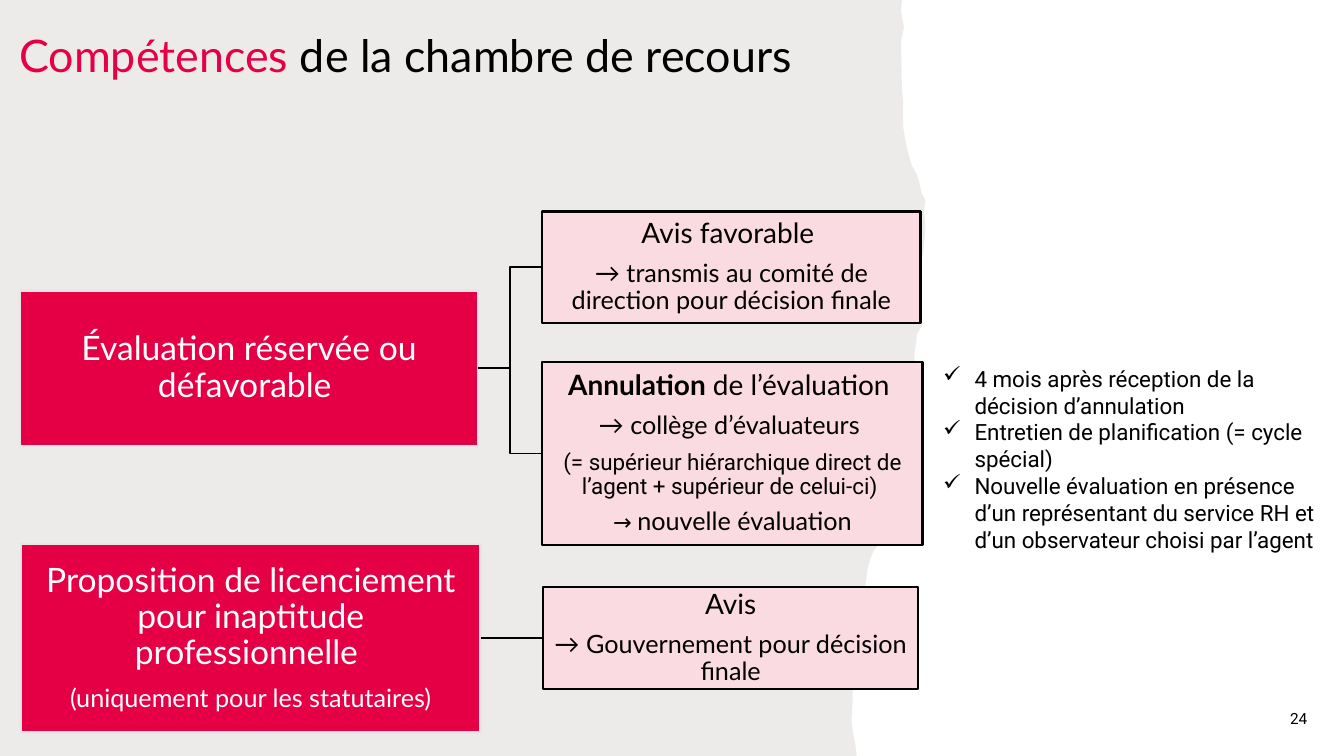
from dataclasses import dataclass

from lxml.etree import SubElement
from pptx import Presentation
from pptx.dml.color import RGBColor
from pptx.enum.shapes import MSO_CONNECTOR, MSO_SHAPE
from pptx.enum.text import MSO_ANCHOR, MSO_AUTO_SIZE, PP_ALIGN
from pptx.oxml.ns import qn
from pptx.util import Cm, Pt


@dataclass(frozen=True)
class Theme:
    red: str = "E50046"
    pink: str = "FBDBE2"
    sand: str = "ECEBE9"
    edge: str = "E7E6E6"
    black: str = "000000"
    white: str = "FFFFFF"
    head: str = "Lato"
    body: str = "Roboto"
    title: int = 32
    big: int = 24
    mid: int = 20
    sub: int = 18
    note: int = 16
    tiny: int = 11


# Right edge of the torn paper, in tenths of a millimetre
TORN = [
    (2273, 0), (2271, 30), (2278, 69), (2271, 104), (2271, 124), (2273, 226),
    (2276, 254), (2276, 318), (2281, 351), (2289, 386), (2294, 404),
    (2299, 419), (2309, 437), (2316, 455), (2322, 485), (2332, 505),
    (2329, 533), (2332, 572), (2329, 620), (2316, 698), (2319, 762),
    (2322, 795), (2324, 820), (2311, 841), (2309, 861), (2304, 894),
    (2306, 919), (2299, 942), (2294, 975), (2289, 1024), (2283, 1049),
    (2281, 1105), (2263, 1173), (2263, 1212), (2256, 1270), (2245, 1295),
    (2228, 1334), (2223, 1346), (2215, 1367), (2200, 1392), (2192, 1412),
    (2187, 1430), (2182, 1468), (2177, 1499), (2172, 1519), (2169, 1537),
    (2159, 1580), (2159, 1598), (2156, 1636), (2159, 1664), (2149, 1689),
    (2149, 1763), (2146, 1814), (2149, 1842), (2156, 1880), (2159, 1905),
]


def color(code):
    return RGBColor.from_string(code)


def write(frame, paras, font, size, ink, align=PP_ALIGN.LEFT,
          anchor=MSO_ANCHOR.TOP, inset=None, line=None, gap=0, bullet=None):
    """Fill a frame; each paragraph is a list of (text, format changes)."""
    frame.word_wrap = True
    frame.auto_size = MSO_AUTO_SIZE.NONE
    frame.vertical_anchor = anchor
    if inset is not None:
        frame.margin_left = frame.margin_right = inset
        frame.margin_top = frame.margin_bottom = inset
    for i, runs in enumerate(paras):
        para = frame.add_paragraph() if i else frame.paragraphs[0]
        para.alignment = align
        if line:
            para.line_spacing = line
        largest = max(look.get("size", size) for _, look in runs)
        para.space_after = Pt(round(gap * largest, 1))
        if bullet:
            props = para._p.get_or_add_pPr()
            props.set("marL", str(Cm(0.79)))
            props.set("indent", str(-Cm(0.79)))
            SubElement(props, qn("a:buChar")).set("char", bullet)
        for words, look in runs:
            run = para.add_run()
            run.text = words
            run.font.name = look.get("font", font)
            run.font.size = Pt(look.get("size", size))
            run.font.bold = look.get("bold", False)
            run.font.color.rgb = color(look.get("ink", ink))


class Deck:
    def __init__(self, theme):
        self.theme = theme
        self.file = Presentation()
        self.file.slide_width, self.file.slide_height = Cm(33.87), Cm(19.05)
        self.slide = self.file.slides.add_slide(self.file.slide_layouts[5])
        self.shapes = self.slide.shapes

    def title(self, spot, runs):
        head = self.shapes.title
        head.left, head.top, head.width, head.height = map(Cm, spot)
        write(head.text_frame, [runs], self.theme.head, self.theme.title,
              self.theme.black)

    def paper(self, edge):
        """Draw the torn sheet behind everything else."""
        form = self.shapes.build_freeform(0, 0, scale=Cm(0.01))
        form.add_line_segments(edge + [(0, edge[-1][1])], close=True)
        sheet = form.convert_to_shape()
        sheet.shadow.inherit = False
        sheet.fill.solid()
        sheet.fill.fore_color.rgb = color(self.theme.sand)
        sheet.line.fill.background()
        self.shapes.title.element.addprevious(sheet.element)

    def box(self, spot, paras, fill, line, ink, size, inset):
        rect = self.shapes.add_shape(MSO_SHAPE.RECTANGLE, *map(Cm, spot))
        rect.shadow.inherit = False
        rect.fill.solid()
        rect.fill.fore_color.rgb = color(fill)
        rect.line.color.rgb = color(line)
        rect.line.width = Pt(1.5)
        write(rect.text_frame, paras, self.theme.head, size, ink,
              align=PP_ALIGN.CENTER, anchor=MSO_ANCHOR.MIDDLE,
              inset=Cm(inset), line=0.9, gap=0.42)
        return rect

    def cause(self, spot, paras):
        look = self.theme
        return self.box(spot, paras, look.red, look.edge, look.white,
                        look.big, 0.05)

    def result(self, spot, paras):
        look = self.theme
        return self.box(spot, paras, look.pink, look.black, look.black,
                        look.mid, 0.03)

    def link(self, start, end, kind=MSO_CONNECTOR.ELBOW):
        """Join the right side of start to the left side of end."""
        line = self.shapes.add_connector(kind, 0, 0, 0, 0)
        line.begin_connect(start, 3)
        line.end_connect(end, 1)
        line.line.color.rgb = color(self.theme.black)
        line.line.width = Pt(1)
        SubElement(line.element.spPr, qn("a:effectLst"))

    def text(self, spot, paras, size, **look):
        area = self.shapes.add_textbox(*map(Cm, spot))
        write(area.text_frame, paras, self.theme.body, size,
              self.theme.black, **look)


def main():
    theme = Theme()
    deck = Deck(theme)
    sub = {"size": theme.sub}
    note = {"size": theme.note, "font": theme.body}

    deck.title((0.23, 0.58, 22.66, 1.63),
               [("Compétences", {"ink": theme.red}),
                (" de la chambre de recours", {})])
    deck.paper(TORN)

    review = deck.cause((0.51, 7.32, 11.53, 3.91),
                        [[("Évaluation réservée ou défavorable ", {})]])
    favor = deck.result((13.67, 5.33, 9.53, 2.8), [
        [("Avis favorable ", {})],
        [("→ transmis au comité de direction pour décision finale", sub)],
    ])
    annul = deck.result((13.67, 9.12, 9.58, 4.62), [
        [("Annulation ", {"bold": True}), ("de l’évaluation ", {})],
        [("→ collège d’évaluateurs ", sub)],
        [("(= supérieur hiérarchique direct de l’agent + "
          "supérieur de celui-ci) ", note)],
        [("→ ", note), ("nouvelle évaluation", sub)],
    ])
    firing = deck.cause((0.53, 13.7, 11.58, 4.76), [
        [("Proposition de licenciement pour inaptitude professionnelle ", {})],
        [("(uniquement pour les statutaires)", sub)],
    ])
    advice = deck.result((13.69, 14.8, 9.45, 2.56), [
        [("Avis", {})],
        [("→ Gouvernement pour décision finale", sub)],
    ])
    deck.link(review, favor)
    deck.link(review, annul)
    deck.link(firing, advice, MSO_CONNECTOR.STRAIGHT)

    steps = [
        "4 mois après réception de la décision d’annulation",
        "Entretien de planification (= cycle spécial)",
        "Nouvelle évaluation en présence d’un représentant du service RH "
        "et d’un observateur choisi par l’agent",
    ]
    deck.text((23.52, 9.07, 9.88, 5.74), [[(step, {})] for step in steps],
              theme.note, bullet="✓")
    deck.text((25.58, 17.6, 7.62, 1.02), [[("24", {})]], theme.tiny,
              align=PP_ALIGN.RIGHT, anchor=MSO_ANCHOR.MIDDLE, gap=0.55)
    deck.file.save("out.pptx")


if __name__ == "__main__":
    main()
